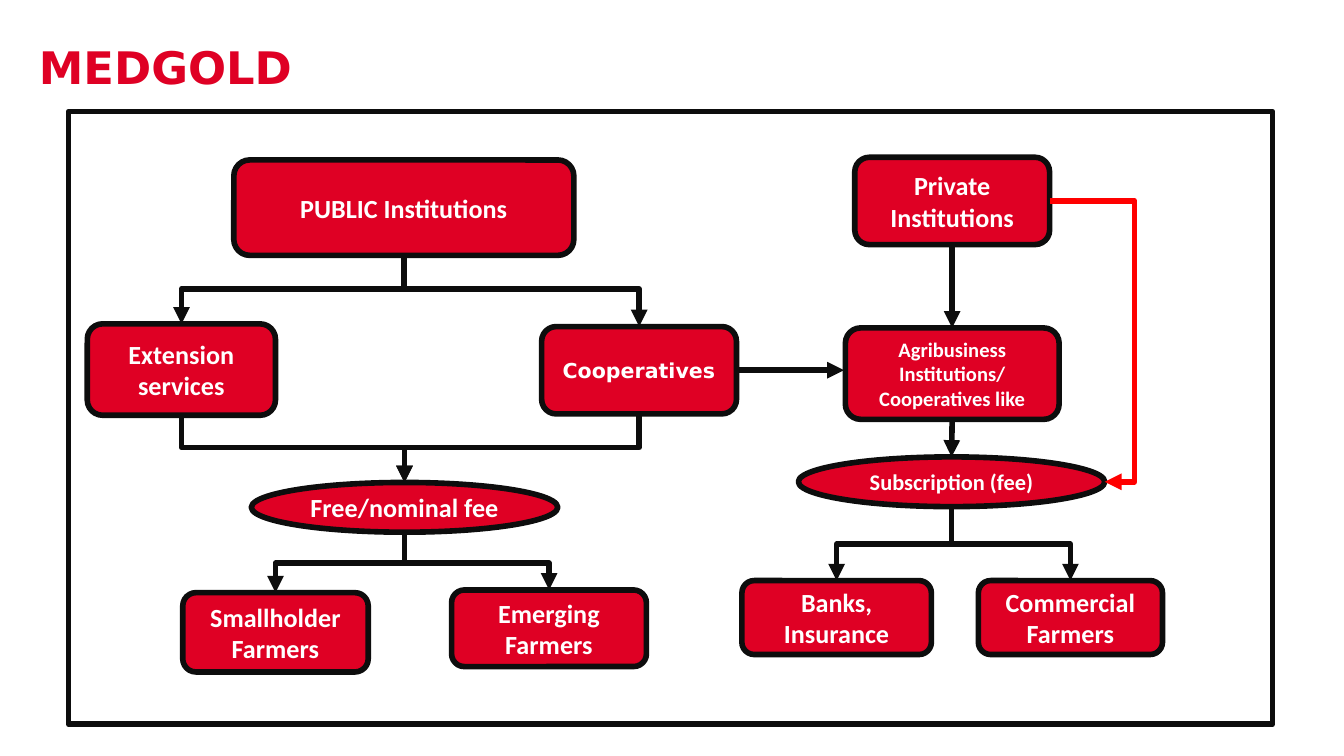
import pptx
import pptx.util
import pptx.dml.color
import pptx.enum.shapes
import pptx.enum.text
import pptx.oxml
import pptx.oxml.ns

Inches, Pt = pptx.util.Inches, pptx.util.Pt
RGB = pptx.dml.color.RGBColor.from_string
KIND = pptx.enum.shapes.MSO_SHAPE
LINK = pptx.enum.shapes.MSO_CONNECTOR
ALIGN = pptx.enum.text.PP_ALIGN
ANCHOR = pptx.enum.text.MSO_ANCHOR
qn = pptx.oxml.ns.qn
COLOR = {"fill": "DF0024", "edge": "0D0D0D", "text": "FFFFFF", "bypass": "FF0000"}

deck = pptx.Presentation()
deck.slide_width, deck.slide_height = Inches(10), Inches(10 * 9 / 16)
slide = deck.slides.add_slide(deck.slide_layouts[6])
shapes = slide.shapes


def arrow(kind, start, end, color="edge", bend=None):
    """Draw an arrow; bend is the fraction of the way at which an elbow turns."""
    line = shapes.add_connector(kind, *[Inches(v) for v in (*start, *end)])
    line.line.color.rgb = RGB(COLOR[color])
    line.line.width = Pt(3)
    pen = line.line._get_or_add_ln()
    pen.append(pen.makeelement(qn("a:tailEnd"), {"type": "triangle"}))
    props = line._element.spPr
    props.append(props.makeelement(qn("a:effectLst"), {}))
    if bend is not None:
        guides = props.find(qn("a:prstGeom")).get_or_add_avLst()
        value = {"name": "adj1", "fmla": f"val {round(bend * 100000)}"}
        guides.append(guides.makeelement(qn("a:gd"), value))
    return line


def drop(start, end, rail):
    """Draw an elbow arrow that leaves downwards and turns at height rail."""
    (x1, y1), (x2, y2) = start, end
    line = arrow(LINK.ELBOW, start, end, bend=(rail - y1) / (y2 - y1))
    wide, high = y2 - y1, abs(x2 - x1)
    line.left = Inches((x1 + x2 - wide) / 2)
    line.top = Inches((y1 + y2 - high) / 2)
    line.width, line.height = Inches(wide), Inches(high)
    frame = line._element.spPr.find(qn("a:xfrm"))
    frame.set("rot", "16200000" if x2 > x1 else "5400000")
    frame.set("flipH", "1" if x2 > x1 else "0")


# Title
title = shapes.add_textbox(Inches(0.29), Inches(0.36), Inches(9.4), Inches(0.33))
body = title.text_frame
body.word_wrap = True
body.margin_left = body.margin_top = body.margin_right = body.margin_bottom = 0
par = body.paragraphs[0]
par.text = "MEDGOLD"
par.line_spacing = Pt(24.3)
par.font.name, par.font.size, par.font.bold = "DejaVu Sans", Pt(24), True
par.font.color.rgb = RGB(COLOR["fill"])

# Nodes: key, kind, left, top, width, height, text, size, font
ROUND, OVAL = KIND.ROUNDED_RECTANGLE, KIND.OVAL
NODES = [
    ("small", ROUND, 1.36, 4.41, 1.38, 0.59, "Smallholder Farmers", 14, "Calibri"),
    ("public", ROUND, 1.74, 1.19, 2.53, 0.71, "PUBLIC Institutions", 14, "Calibri"),
    ("emerging", ROUND, 3.36, 4.39, 1.45, 0.57, "Emerging Farmers", 14, "Calibri"),
    ("trade", ROUND, 7.28, 4.32, 1.37, 0.55, "Commercial Farmers", 14, "Calibri"),
    ("service", ROUND, 0.65, 2.41, 1.4, 0.68, "Extension services", 14, "Calibri"),
    ("coop", ROUND, 4.03, 2.43, 1.45, 0.65, "Cooperatives", 11, "DejaVu Sans"),
    ("bank", ROUND, 5.52, 4.32, 1.41, 0.55, "Banks, Insurance", 14, "Calibri"),
    ("private", ROUND, 6.36, 1.17, 1.45, 0.65, "Private Institutions", 14, "Calibri"),
    ("agri", ROUND, 6.29, 2.44, 1.59, 0.68,
     "Agribusiness Institutions/ Cooperatives like", 11, "Calibri"),
    ("free", OVAL, 1.87, 3.59, 2.28, 0.37, "Free/nominal fee", 14, "Calibri"),
    ("paid", OVAL, 5.94, 3.4, 2.28, 0.37, "Subscription (fee)", 12, "Calibri"),
]
node, top, foot, right = {}, {}, {}, {}
for key, kind, x, y, w, h, text, size, font in NODES:
    box = shapes.add_shape(kind, Inches(x), Inches(y), Inches(w), Inches(h))
    box.shadow.inherit = False
    box.fill.solid()
    box.fill.fore_color.rgb = RGB(COLOR["fill"])
    box.line.color.rgb = RGB(COLOR["edge"])
    box.line.width = Pt(3)
    box.text_frame.word_wrap = True
    box.text_frame.vertical_anchor = ANCHOR.MIDDLE
    par = box.text_frame.paragraphs[0]
    par.text = text
    par.alignment = ALIGN.CENTER
    par.font.name, par.font.size, par.font.bold = font, Pt(size), True
    par.font.color.rgb = RGB(COLOR["text"])
    node[key] = box
    top[key], foot[key] = (x + w / 2, y), (x + w / 2, y + h)
    right[key] = (x + w, y + h / 2)

# Branches that share a horizontal rail
for start, end, rail in [
    ("public", "service", 2.15), ("public", "coop", 2.15),
    ("service", "free", 3.33), ("coop", "free", 3.33),
    ("free", "small", 4.19), ("free", "emerging", 4.19),
    ("paid", "trade", 4.05), ("paid", "bank", 4.05),
]:
    drop(foot[start], top[end], rail)

# Straight arrows down the private side
for start, end in [("private", "agri"), ("agri", "paid")]:
    line = arrow(LINK.STRAIGHT, foot[start], top[end])
    line.begin_connect(node[start], 2)
    line.end_connect(node[end], 0)

# Level arrow, which meets the agribusiness node above its middle
line = arrow(LINK.STRAIGHT, right["coop"], (6.28, right["coop"][1]))
line.begin_connect(node["coop"], 3)

# Frame
frame = shapes.add_shape(KIND.RECTANGLE, Inches(0.51), Inches(0.83), Inches(8.96), Inches(4.56))
frame.shadow.inherit = False
frame.fill.background()
frame.line.color.rgb = RGB(COLOR["edge"])
frame.line.width = Pt(3)

# Bypass from private institutions straight to the subscription
arrow(LINK.ELBOW, right["private"], right["paid"], "bypass", bend=1.54)

deck.save("out.pptx")
